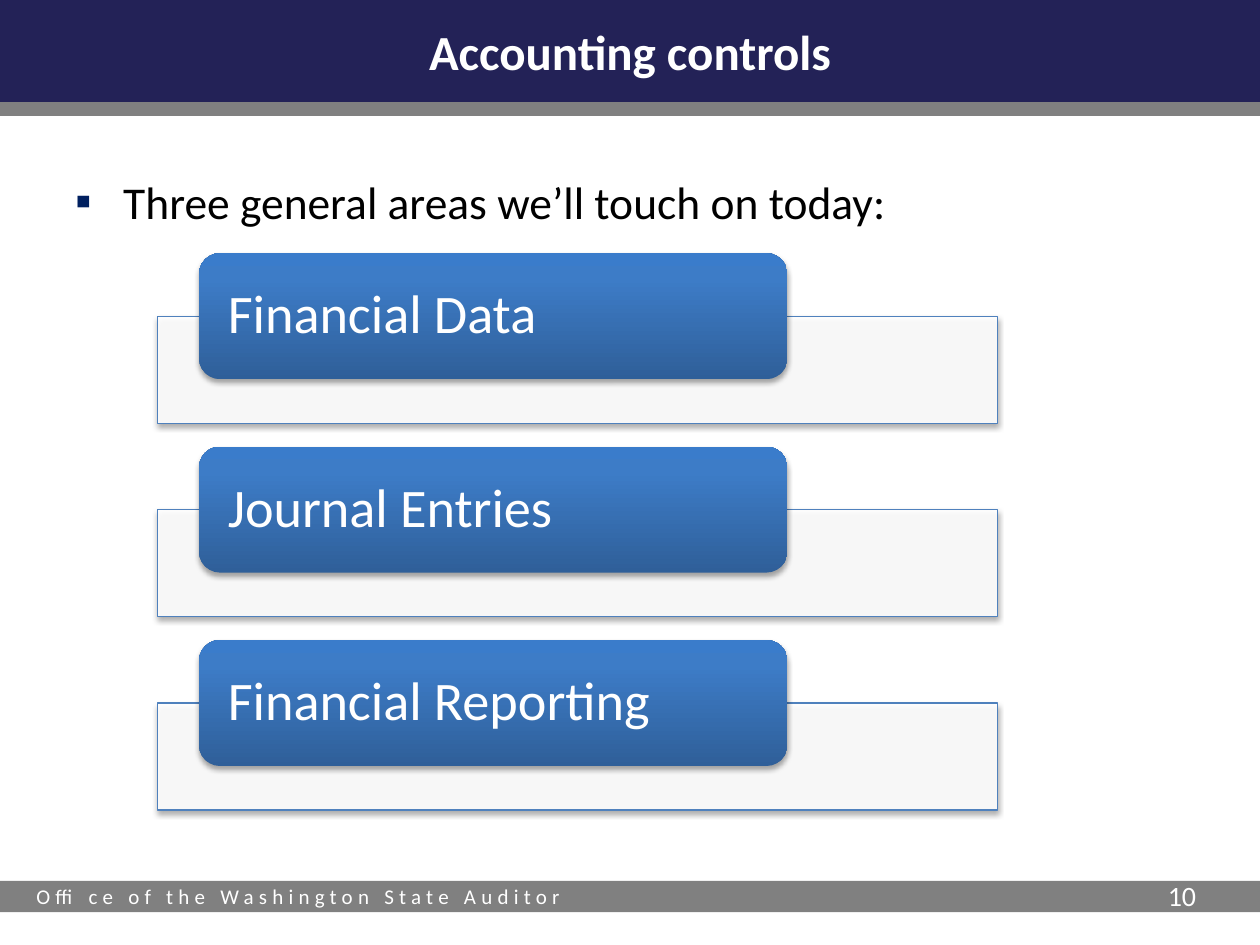
from pptx import Presentation
from pptx.dml.color import RGBColor
from pptx.enum.shapes import MSO_SHAPE
from pptx.enum.text import MSO_ANCHOR, PP_ALIGN
from pptx.oxml import parse_xml
from pptx.oxml.ns import nsdecls, qn
from pptx.util import Inches, Pt

RECT, ROUNDED = MSO_SHAPE.RECTANGLE, MSO_SHAPE.ROUNDED_RECTANGLE
TOP, MIDDLE = MSO_ANCHOR.TOP, MSO_ANCHOR.MIDDLE
LEFT, CENTER = PP_ALIGN.LEFT, PP_ALIGN.CENTER

TITLE = "Accounting controls"
INTRO = "Three general areas we’ll touch on today:"
AREAS = ["Financial Data", "Journal Entries", "Financial Reporting"]
FOOTER = "Office of the Washington State Auditor"
PAGE = "10"

FONT = "Calibri"
COLORS = {
    "navy": "232257", "gray": "808080", "white": "FFFFFF", "black": "000000",
    "bullet": "002060", "outline": "4F81BD",
}
GRADIENT = [(0, "2F5F99"), (80, "3D7CC7"), (100, "3A7CCB")]
BARS = [(0, 0.81, "navy"), (0.81, 0.11, "gray"), (6.99, 0.25, "gray")]

FIRST_TOP, LAST_TOP = 2.01, 5.08
PITCH = (LAST_TOP - FIRST_TOP) / (len(AREAS) - 1)
PANEL_DROP = 0.5


def rgb(name):
    return RGBColor.from_string(COLORS[name])


def add_box(slide, kind, at, color=None):
    sp = slide.shapes.add_shape(kind, *map(Inches, at))
    sp.shadow.inherit = False
    sp.line.fill.background()
    if color:
        sp.fill.solid()
        sp.fill.fore_color.rgb = rgb(color)
    return sp


def write(sp, text, size, color="white", align=LEFT, anchor=TOP, wrap=True):
    tf = sp.text_frame
    tf.word_wrap = wrap
    tf.vertical_anchor = anchor
    p = tf.paragraphs[0]
    p.text = text
    p.alignment = align
    p.font.name = FONT
    p.font.size = Pt(size)
    p.font.color.rgb = rgb(color)
    return p


def add_text(slide, at, *args, **kwargs):
    return write(slide.shapes.add_textbox(*map(Inches, at)), *args, **kwargs)


def add_shadow(sp):
    sp._element.spPr.find(qn("a:effectLst")).append(parse_xml(
        f'<a:outerShdw {nsdecls("a")} blurRad="{Pt(3.1)}" dist="{Pt(1.8)}" '
        f'dir="5400000" rotWithShape="0"><a:srgbClr val="{COLORS["black"]}">'
        '<a:alpha val="35000"/></a:srgbClr></a:outerShdw>'))


def set_gradient(sp):
    """Fill from bottom to top with the GRADIENT stops."""
    sp.fill.background()
    spPr = sp._element.spPr
    stops = "".join(f'<a:gs pos="{pos * 1000}"><a:srgbClr val="{color}"/></a:gs>'
                    for pos, color in GRADIENT)
    spPr.replace(spPr.find(qn("a:noFill")), parse_xml(
        f'<a:gradFill {nsdecls("a")} rotWithShape="1"><a:gsLst>{stops}</a:gsLst>'
        '<a:lin ang="16200000" scaled="0"/></a:gradFill>'))


def set_bullet(p, indent):
    pPr = p._p.get_or_add_pPr()
    pPr.set("marL", str(Inches(indent)))
    pPr.set("indent", str(-Inches(indent)))
    bullet = [f'<a:buClr {nsdecls("a")}><a:srgbClr val="{COLORS["bullet"]}"/></a:buClr>',
              f'<a:buFont {nsdecls("a")} typeface="{FONT}"/>',
              f'<a:buChar {nsdecls("a")} char="▪"/>']
    defaults = pPr.find(qn("a:defRPr"))
    for xml in bullet:
        defaults.addprevious(parse_xml(xml))


def add_area(slide, name, top):
    panel = add_box(slide, RECT, (1.25, top + PANEL_DROP, 6.67, 0.85), "white")
    panel.line.color.rgb = rgb("outline")
    panel.line.width = Pt(0.75)
    fill_color = panel._element.spPr.find(qn("a:solidFill"))[0]
    fill_color.append(parse_xml(f'<a:alpha {nsdecls("a")} val="90000"/>'))
    add_shadow(panel)

    label = add_box(slide, ROUNDED, (1.58, top, 4.67, 1))
    set_gradient(label)
    add_shadow(label)
    tf = label.text_frame
    tf.margin_left = tf.margin_right = Inches(0.18)
    tf.margin_top = tf.margin_bottom = 0
    write(label, name, 31, anchor=MIDDLE).line_spacing = 0.9


def main():
    prs = Presentation()
    prs.slide_width, prs.slide_height = Inches(10), Inches(7.5)
    slide = prs.slides.add_slide(prs.slide_layouts[6])

    for top, height, color in BARS:
        add_box(slide, RECT, (0, top, 10, height), color)

    footer = add_text(slide, (0.19, 6.96, 4.44, 0.3), FOOTER, 12, wrap=False)
    footer.runs[0].font._element.set("spc", "300")

    intro = add_text(slide, (0.5, 1.33, 9, 0.6), INTRO, 26, "black")
    intro.space_after = Pt(12)
    set_bullet(intro, 0.38)

    title = add_text(slide, (0, 0, 10, 0.81), TITLE, 28, align=CENTER, anchor=MIDDLE)
    title.font.bold = True
    add_text(slide, (9.17, 6.92, 0.58, 0.4), PAGE, 16)

    for i, name in enumerate(AREAS):
        add_area(slide, name, FIRST_TOP + i * PITCH)

    prs.save("out.pptx")


if __name__ == "__main__":
    main()
